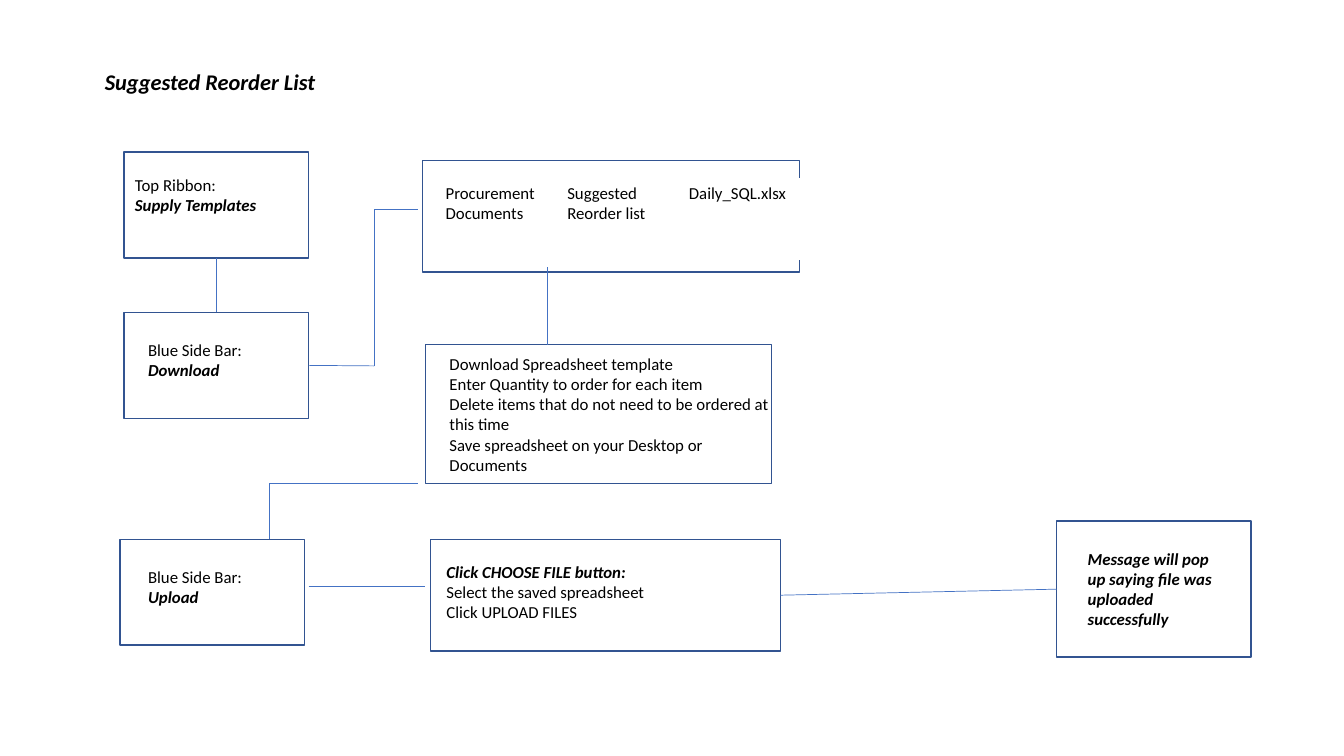
"""Build the Suggested Reorder List flow slide."""
from lxml import etree
from pptx import Presentation
from pptx.dml.color import RGBColor
from pptx.enum.shapes import MSO_CONNECTOR, MSO_SHAPE
from pptx.enum.text import MSO_ANCHOR, MSO_AUTO_SIZE, PP_ALIGN
from pptx.oxml.ns import qn
from pptx.util import Pt

PX = 9144
BLACK = RGBColor(0x00, 0x00, 0x00)
WHITE = RGBColor(0xFF, 0xFF, 0xFF)
BORDER = RGBColor(0x32, 0x54, 0x91)
LINK = RGBColor(0x44, 0x72, 0xC4)
RECTANGLE = MSO_SHAPE.RECTANGLE
STRAIGHT = MSO_CONNECTOR.STRAIGHT
LEFT = PP_ALIGN.LEFT
TOP = MSO_ANCHOR.TOP
GROW = MSO_AUTO_SIZE.SHAPE_TO_FIT_TEXT
PLAIN = {"name": "Calibri", "size": Pt(12), "bold": False, "italic": False}
STRONG = {**PLAIN, "bold": True, "italic": True}
HEADING = {**STRONG, "size": Pt(16)}


def emu(*lengths):
    return [length * PX for length in lengths]


def write(frame, lines):
    for index, (text, style) in enumerate(lines):
        para = frame.add_paragraph() if index else frame.paragraphs[0]
        para.alignment = LEFT
        span = para.add_run()
        span.text = text
        for key, value in style.items():
            setattr(span.font, key, value)
        span.font.color.rgb = BLACK


deck = Presentation()
deck.slide_width, deck.slide_height = emu(1333, 750)
page = deck.slides.add_slide(deck.slide_layouts[5])
shapes = page.shapes

title = shapes.title
title.left, title.top, title.width, title.height = emu(94, 63, 232, 37)
title.text_frame.word_wrap = False
title.text_frame.auto_size = GROW
title.text_frame.vertical_anchor = TOP
write(title.text_frame, [("Suggested Reorder List", HEADING)])

FRAMES = {
    "ribbon": (123, 151, 183, 105),
    "download": (123, 310, 183, 105),
    "spreadsheet": (422, 342, 343, 138),
    "message": (1048, 517, 193, 135),
    "choose": (427, 535, 347, 111),
    "documents": (419, 159, 374, 111),
    "upload": (119, 535, 183, 105),
}
boxes = {}
for name, place in FRAMES.items():
    box = shapes.add_shape(RECTANGLE, *emu(*place))
    box.shadow.inherit = False
    box.fill.background()
    box.line.color.rgb = BORDER
    box.line.width = Pt(1)
    boxes[name] = box

LABELS = [
    ((124, 168, 142, 71), False, [("Top Ribbon:", PLAIN), ("Supply Templates", STRONG)]),
    ((137, 332, 114, 50), False, [("Blue Side Bar:", PLAIN), ("Download", STRONG)]),
    ((436, 346, 343, 172), True, [
        ("Download Spreadsheet template", PLAIN),
        ("Enter Quantity to order for each item", PLAIN),
        ("Delete items that do not need to be ordered at this time", PLAIN),
        ("Save spreadsheet on your Desktop or Documents", PLAIN),
    ]),
    ((1069, 539, 146, 91), True, [
        ("Message will pop up saying file was uploaded successfully", STRONG),
    ]),
    ((433, 552, 343, 71), True, [
        ("Click CHOOSE FILE button:", STRONG),
        ("Select the saved spreadsheet", PLAIN),
        ("Click UPLOAD FILES", PLAIN),
    ]),
    ((137, 557, 114, 50), False, [("Blue Side Bar:", PLAIN), ("Upload", STRONG)]),
]
for place, wrap, lines in LABELS:
    label = shapes.add_textbox(*emu(*place))
    label.text_frame.word_wrap = wrap
    label.text_frame.auto_size = GROW
    write(label.text_frame, lines)

DOCUMENTS = ["Procurement Documents", "Suggested Reorder list", "Daily_SQL.xlsx"]
table = shapes.add_table(1, len(DOCUMENTS), *emu(432, 177, 362, 80)).table
table.first_row = False
table.horz_banding = False
for cell, text in zip(table.rows[0].cells, DOCUMENTS):
    cell.fill.solid()
    cell.fill.fore_color.rgb = WHITE
    write(cell.text_frame, [(text, PLAIN)])

LINKS = [
    ((214, 256, 214, 310), ("ribbon", 2), ("download", 0)),
    ((306, 363, 371, 363), ("download", 3), None),
    ((371, 208, 371, 363), None, None),
    ((371, 208, 415, 208), None, None),
    ((543, 265, 543, 342), None, None),
    ((267, 480, 415, 480), None, None),
    ((267, 480, 267, 535), None, None),
    ((306, 582, 422, 582), None, None),
    ((774, 590, 1048, 585), ("choose", 3), ("message", 1)),
]
for ends, start, finish in LINKS:
    link = shapes.add_connector(STRAIGHT, *emu(*ends))
    link.line.color.rgb = LINK
    link.line.width = Pt(0.5)
    etree.SubElement(link._element.spPr, qn("a:effectLst"))
    if start:
        link.begin_connect(boxes[start[0]], start[1])
    if finish:
        link.end_connect(boxes[finish[0]], finish[1])

deck.save("out.pptx")
